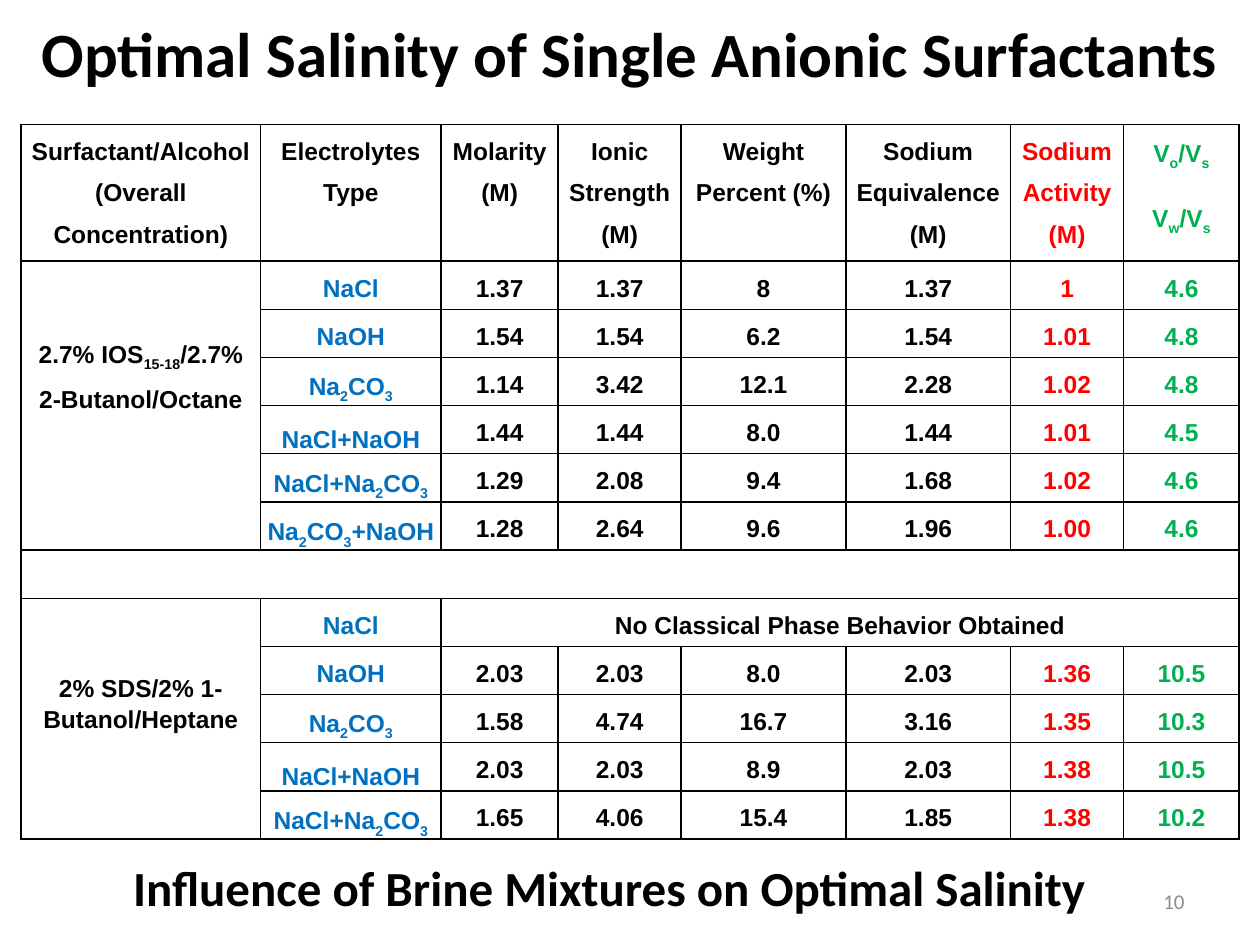
from lxml.etree import SubElement
from pptx import Presentation
from pptx.dml.color import RGBColor as Color
from pptx.enum.text import MSO_ANCHOR as Anchor, PP_ALIGN as Align
from pptx.oxml.ns import qn
from pptx.util import Pt

THEME = {
    "black": Color(0, 0, 0),
    "blue": Color(0x00, 0x70, 0xC0),
    "red": Color(0xFF, 0, 0),
    "green": Color(0x00, 0xB0, 0x50),
    "gray": Color(0x8C, 0x8C, 0x8C),
    "border": "000000",
    "heading_font": "Calibri",
    "table_font": "Arial",
    "title": 36,
    "subtitle": 28,
    "table": 14,
    "number": 12,
}

TEXTS = [
    ("Optimal Salinity of Single Anionic Surfactants", (0, 0, 720, 60),
     "title", "black", True, Align.CENTER, Anchor.MIDDLE),
    ("Influence of Brine Mixtures on Optimal Salinity", (54, 486.7, 588, 41),
     "subtitle", "black", True, Align.CENTER, Anchor.TOP),
    ("10", (516, 500.5, 168, 28.8),
     "number", "gray", False, Align.RIGHT, Anchor.MIDDLE),
]

HEADER = [
    "Surfactant/Alcohol (Overall Concentration)", "Electrolytes Type",
    "Molarity (M)", "Ionic Strength (M)", "Weight Percent (%)",
    "Sodium Equivalence (M)", "Sodium Activity (M)", "V{o}/V{s}\nV{w}/V{s}",
]
GROUPS = [
    {
        "surfactant": "2.7% IOS{15-18}/2.7% 2-Butanol/Octane",
        "format": {"top": 36.6},
        "rows": [
            ("NaCl", "1.37", "1.37", "8", "1.37", "1", "4.6"),
            ("NaOH", "1.54", "1.54", "6.2", "1.54", "1.01", "4.8"),
            ("Na{2}CO{3}", "1.14", "3.42", "12.1", "2.28", "1.02", "4.8"),
            ("NaCl+NaOH", "1.44", "1.44", "8.0", "1.44", "1.01", "4.5"),
            ("NaCl+Na{2}CO{3}", "1.29", "2.08", "9.4", "1.68", "1.02", "4.6"),
            ("Na{2}CO{3}+NaOH", "1.28", "2.64", "9.6", "1.96", "1.00", "4.6"),
        ],
    },
    {
        "surfactant": "2% SDS/2% 1-Butanol/Heptane",
        "format": {"top": 41.5, "spacing": 1.15, "after": 0},
        "rows": [
            ("NaCl", "No Classical Phase Behavior Obtained"),
            ("NaOH", "2.03", "2.03", "8.0", "2.03", "1.36", "10.5"),
            ("Na{2}CO{3}", "1.58", "4.74", "16.7", "3.16", "1.35", "10.3"),
            ("NaCl+NaOH", "2.03", "2.03", "8.9", "2.03", "1.38", "10.5"),
            ("NaCl+Na{2}CO{3}", "1.65", "4.06", "15.4", "1.85", "1.38", "10.2"),
        ],
    },
]

TABLE_LEFT, TABLE_TOP = 12.1, 71.2
COLUMN_WIDTHS = [136.8, 103.2, 66.9, 70.3, 94.1, 94.1, 64.7, 66]
HEADER_HEIGHT, ROW_HEIGHT = 78, 27.55
COLUMN_COLORS = ["black", "blue", "black", "black", "black", "black", "red", "green"]


def apply(target, values):
    for name, value in values.items():
        setattr(target, name, value)


def write(paragraph, text, font, size, color, bold):
    for index, part in enumerate(text.replace("}", "{").split("{")):
        if not part:
            continue
        run = paragraph.add_run()
        run.text = part
        apply(run.font, {"name": THEME[font], "size": Pt(THEME[size]), "bold": bold})
        run.font.color.rgb = THEME[color]
        if index % 2:
            run._r.get_or_add_rPr().set("baseline", "-25000")


def add_text(slide, text, box, size, color, bold, align, anchor):
    frame = slide.shapes.add_textbox(*map(Pt, box)).text_frame
    apply(frame, {"word_wrap": True, "vertical_anchor": anchor})
    frame.paragraphs[0].alignment = align
    write(frame.paragraphs[0], text, "heading_font", size, color, bold)


def style_cell(cell):
    apply(cell, {"margin_left": Pt(2.88), "margin_right": Pt(2.88),
                 "margin_top": 0, "margin_bottom": 0})
    properties = cell._tc.get_or_add_tcPr()
    for side in ("lnL", "lnR", "lnT", "lnB"):
        line = SubElement(properties, qn(f"a:{side}"), w=str(Pt(1)))
        fill = SubElement(line, qn("a:solidFill"))
        SubElement(fill, qn("a:srgbClr"), val=THEME["border"])
    cell.fill.background()


def fill_cell(cell, text, color, top=0, spacing=1.5, after=10, anchor=Anchor.TOP):
    apply(cell, {"margin_top": Pt(top), "vertical_anchor": anchor})
    frame = cell.text_frame
    for index, line in enumerate(text.split("\n")):
        paragraph = frame.add_paragraph() if index else frame.paragraphs[0]
        apply(paragraph, {"alignment": Align.CENTER, "line_spacing": spacing,
                          "space_after": Pt(after)})
        write(paragraph, line, "table_font", "table", color, True)


def add_salinity_table(slide):
    row_count = sum(len(group["rows"]) for group in GROUPS) + len(GROUPS)
    heights = [HEADER_HEIGHT] + [ROW_HEIGHT] * (row_count - 1)
    last = len(COLUMN_WIDTHS) - 1
    table = slide.shapes.add_table(
        row_count, last + 1, Pt(TABLE_LEFT), Pt(TABLE_TOP),
        Pt(sum(COLUMN_WIDTHS)), Pt(sum(heights))).table
    apply(table, {"first_row": False, "horz_banding": False})
    for column, width in zip(table.columns, COLUMN_WIDTHS):
        column.width = Pt(width)
    for row, height in zip(table.rows, heights):
        row.height = Pt(height)
    for cell in table.iter_cells():
        style_cell(cell)

    for column, text in enumerate(HEADER):
        color = "black" if column == 1 else COLUMN_COLORS[column]
        fill_cell(table.cell(0, column), text, color)

    start = 1
    for group in GROUPS:
        if start > 1:
            table.cell(start - 1, 0).merge(table.cell(start - 1, last))
        end = start + len(group["rows"])
        table.cell(start, 0).merge(table.cell(end - 1, 0))
        fill_cell(table.cell(start, 0), group["surfactant"], "black", **group["format"])
        for row, values in enumerate(group["rows"], start):
            if len(values) < last:
                table.cell(row, len(values)).merge(table.cell(row, last))
            for column, text in enumerate(values, 1):
                anchor = Anchor.BOTTOM if "+" in text else Anchor.TOP
                fill_cell(table.cell(row, column), text, COLUMN_COLORS[column],
                          anchor=anchor)
        start = end + 1


def main():
    presentation = Presentation()
    apply(presentation, {"slide_width": Pt(720), "slide_height": Pt(540)})
    slide = presentation.slides.add_slide(presentation.slide_layouts[6])
    add_salinity_table(slide)
    for item in TEXTS:
        add_text(slide, *item)
    presentation.save("out.pptx")


if __name__ == "__main__":
    main()
